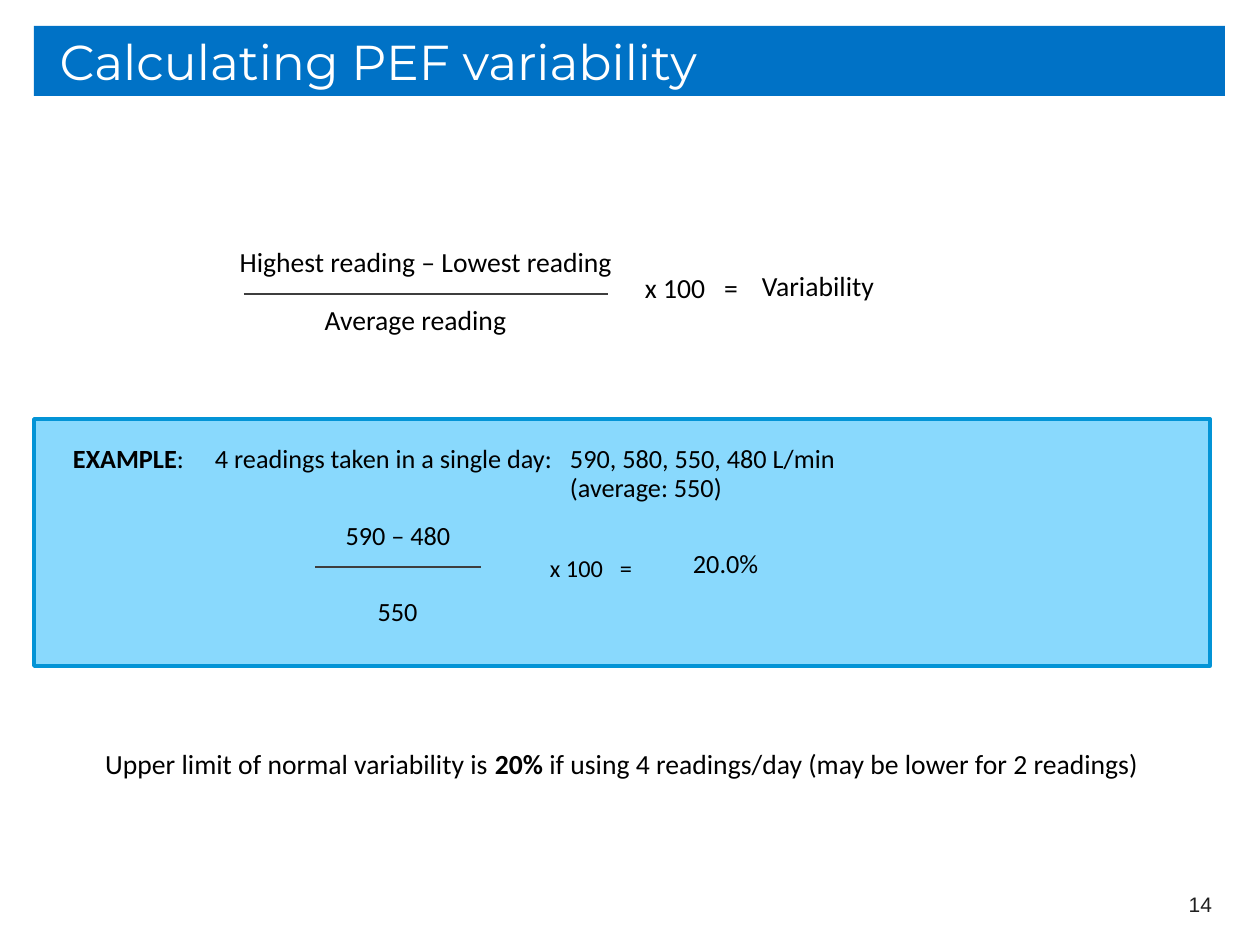
from dataclasses import dataclass
from lxml import etree
from pptx import Presentation, util as u
from pptx.dml.color import RGBColor
from pptx.enum import shapes, text
from pptx.oxml import ns

SCALE = 914400 / 126
LEFT, MID, RIGHT = text.PP_ALIGN.LEFT, text.PP_ALIGN.CENTER, text.PP_ALIGN.RIGHT


@dataclass(frozen=True)
class Theme:
    bar: str = "0072C6"
    panel: str = "89D9FD"
    edge: str = "0394D6"
    rule: str = "3E3E3E"
    ink: str = "000000"
    page: str = "202020"
    white: str = "FFFFFF"
    head: str = "Montserrat"
    body: str = "Calibri"
    num: str = "Arial"
    title: float = 28
    large: float = 15.8
    mid: float = 15
    small: float = 13.9
    tiny: float = 12


T = Theme()


def px(n):
    return u.Emu(round(n * SCALE))


def rgb(code):
    return RGBColor.from_string(code)


def place(box, x, y, w, h):
    return box[0] + x, box[1] + y, w, h


def add_run(para, words, size, bold=False, face=T.body, ink=T.ink):
    run = para.add_run()
    run.text = words
    font = run.font
    font.name, font.size, font.bold = face, u.Pt(size), bold
    font.color.rgb = rgb(ink)


def add_box(slide, box, align=LEFT, inset=(9, 5)):
    frame = slide.shapes.add_textbox(*map(px, box)).text_frame
    frame.word_wrap = True
    frame.margin_left = frame.margin_right = px(inset[0])
    frame.margin_top = frame.margin_bottom = px(inset[1])
    para = frame.paragraphs[0]
    para.alignment = align
    return frame, para


def set_tabs(para, stops):
    tabs = etree.SubElement(para._p.get_or_add_pPr(), ns.qn("a:tabLst"))
    for stop in stops:
        etree.SubElement(tabs, ns.qn("a:tab"), pos=str(px(stop)), algn="l")


def add_label(slide, box, words, size, align=LEFT, lead=0.9, stops=()):
    frame, para = add_box(slide, box, align)
    para.line_spacing = lead
    para.space_before = u.Pt(5.6)
    if stops:
        set_tabs(para, stops)
    for part, bold in words:
        add_run(para, part, size, bold)
    return para


def add_rule(slide, x, y, w):
    line = slide.shapes.add_connector(
        shapes.MSO_CONNECTOR.STRAIGHT, px(x), px(y), px(x + w), px(y))
    line.line.color.rgb = rgb(T.rule)
    line.line.width = u.Pt(0.75)
    etree.SubElement(line._element.spPr, ns.qn("a:effectLst"))


def add_title(slide, box):
    bar = slide.shapes.title
    bar.left, bar.top, bar.width, bar.height = map(px, box)
    bar.fill.solid()
    bar.fill.fore_color.rgb = rgb(T.bar)
    frame = bar.text_frame
    frame.auto_size = text.MSO_AUTO_SIZE.NONE
    frame.vertical_anchor = text.MSO_ANCHOR.MIDDLE
    para = frame.paragraphs[0]
    para.alignment = LEFT
    para.space_before = u.Pt(6)
    para._p.get_or_add_pPr().set("marL", str(px(13)))
    add_run(para, "Calculating PEF variability", T.title, face=T.head, ink=T.white)


def add_rows(slide, box, rows):
    for spot, words, size, align, lead, stops in rows:
        add_label(slide, place(box, *spot), [(words, False)], size, align, lead, stops)


def add_formula(slide, box):
    add_rows(slide, box, [
        ((0, 0, 548, 49), "Highest reading – Lowest reading", T.large, MID, 0.9, ()),
        ((38, 58, 451, 49), "Average reading", T.large, MID, 0.9, ()),
        ((601, 24, 301, 71), "Variability", T.large, LEFT, 0.9, ()),
        ((484, 26, 135, 34), "x 100\t=", T.large, LEFT, 0.9, (79,)),
    ])
    add_rule(slide, box[0] + 92, box[1] + 50, 364)


def add_example(slide, box):
    panel = slide.shapes.add_shape(shapes.MSO_SHAPE.RECTANGLE, *map(px, box))
    panel.shadow.inherit = False
    panel.fill.solid()
    panel.fill.fore_color.rgb = rgb(T.panel)
    panel.line.color.rgb = rgb(T.edge)
    panel.line.width = u.Pt(2)
    para = add_label(
        slide, place(box, 30, 22, 1087, 72),
        [("EXAMPLE", True),
         (": \t4 readings taken in a single day: \t590, 580, 550, 480 L/min ", False)],
        T.mid, stops=(142, 497))
    para.add_line_break()
    add_run(para, "\t\t(average: 550)", T.mid)
    add_rows(slide, box, [
        ((90, 99, 548, 49), "590 – 480", T.mid, MID, 0.9, ()),
        ((138, 175, 451, 49), "550", T.mid, MID, 0.9, ()),
        ((650, 127, 301, 49), "20.0%", T.mid, LEFT, 0.9, ()),
        ((507, 135, 158, 34), "x 100\t=", T.small, LEFT, 0.8, (70,)),
    ])
    add_rule(slide, box[0] + 281, box[1] + 148, 166)


def add_limit(slide, box):
    frame, para = add_box(slide, box, MID, (13, 6))
    add_run(para, "Upper limit of normal variability is ", T.large)
    add_run(para, "20% ", T.large, True)
    add_run(para, "if using 4 readings/day (may be lower for 2 readings)", T.large)


def add_page(slide, box):
    frame, para = add_box(slide, box, RIGHT, (13, 6))
    frame.vertical_anchor = text.MSO_ANCHOR.MIDDLE
    add_run(para, "14", T.tiny, face=T.num, ink=T.page)


def main():
    deck = Presentation()
    deck.slide_width, deck.slide_height = px(1260), px(945)
    slide = deck.slides.add_slide(deck.slide_layouts[5])
    add_title(slide, (34, 26, 1191, 70))
    add_page(slide, (931, 879, 294, 50))
    add_formula(slide, (152, 244, 902, 107))
    add_example(slide, (34, 419, 1176, 247))
    add_limit(slide, (34, 741, 1176, 48))
    deck.save("out.pptx")


if __name__ == "__main__":
    main()
